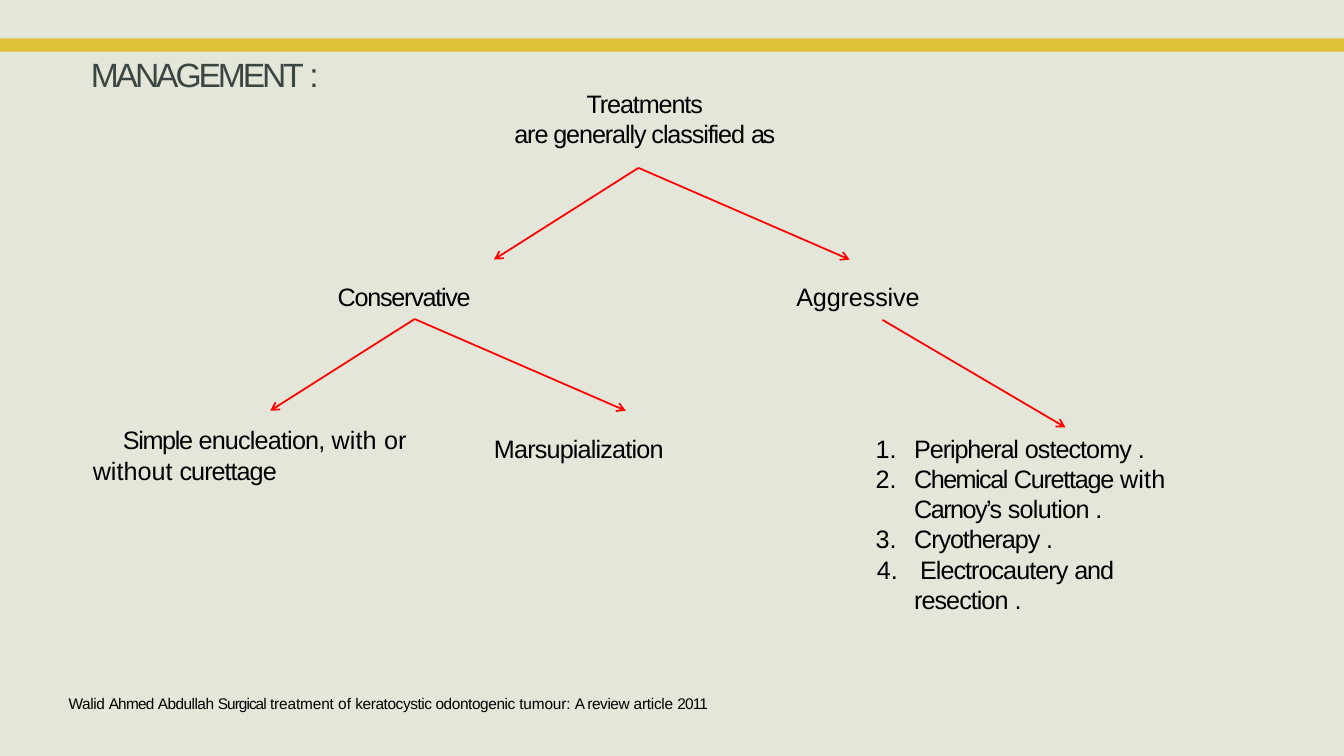
import pptx
import pptx.util
import pptx.dml.color
import pptx.enum.shapes
import pptx.enum.text
import pptx.oxml.ns
import lxml.etree

Cm = pptx.util.Cm
INK = "000000"
RED = "FF0000"
LINE_HEIGHT = 0.84


def color(value):
    return pptx.dml.color.RGBColor.from_string(value)


def sub(parent, tag, **attributes):
    return lxml.etree.SubElement(parent, pptx.oxml.ns.qn(tag), **attributes)


def add_text(slide, box, paragraphs, size=18, ink=INK, align="LEFT", indents=(), numbered=0):
    sp = slide.shapes.add_textbox(*map(Cm, box))
    tf = sp.text_frame
    tf.word_wrap = True
    tf.margin_left = Cm(0.03)
    tf.margin_top = Cm(0.06)
    tf.margin_right = tf.margin_bottom = 0
    for i, runs in enumerate(paragraphs):
        p = tf.paragraphs[0] if i == 0 else tf.add_paragraph()
        p.alignment = getattr(pptx.enum.text.PP_ALIGN, align)
        pPr = p._p.get_or_add_pPr()
        if indents:
            left, first = indents[i]
            pPr.set("marL", str(Cm(left)))
            pPr.set("indent", str(Cm(first)))
        if i < numbered:
            sub(pPr, "a:buFont", typeface="Arial")
            sub(pPr, "a:buAutoNum", type="arabicPeriod")
        p.font.size = pptx.util.Pt(size)
        for text, spacing in runs:
            r = p.add_run()
            r.text = text
            r.font.name = "Arial"
            r.font.size = pptx.util.Pt(size)
            r.font.color.rgb = color(ink)
            r._r.get_or_add_rPr().set("spc", str(round(spacing * 100)))
    return sp


def add_arrow(slide, x, y, dx, dy):
    line = slide.shapes.add_connector(
        pptx.enum.shapes.MSO_CONNECTOR.STRAIGHT, Cm(x), Cm(y), Cm(x + dx), Cm(y + dy))
    line.line.color.rgb = color(RED)
    line.line.width = pptx.util.Pt(1.25)
    sub(line.line._get_or_add_ln(), "a:tailEnd", type="arrow", w="med", len="med")
    sub(line._element.spPr, "a:effectLst")


def add_branch(slide, box, paragraphs, start, arrows, **format):
    add_text(slide, box, paragraphs, **format)
    for dx, dy in arrows:
        add_arrow(slide, box[0] + start[0], box[1] + start[1], dx, dy)


def add_header(slide, left, top, width, height):
    sp = slide.shapes.add_shape(
        pptx.enum.shapes.MSO_SHAPE.RECTANGLE, Cm(left), Cm(top), Cm(width), Cm(height))
    sp.shadow.inherit = False
    sp.fill.solid()
    sp.fill.fore_color.rgb = color("DDC237")
    sp.line.fill.background()
    add_text(slide, (left + 2.26, top + height, 7.7, 1.09),
             [[("MANAGEMENT ", -2.2), (":", -0.2)]], size=24, ink="3B4643")


def add_classification(slide, left, top):
    fork = [(-3.64, 2.31), (5.32, 2.31)]
    add_branch(slide, (left + 9.53, top, 8.79, 1.6),
               [[("Treatments", -0.8)], [("are generally classified ", -0.8), ("as", -1.7)]],
               (4.25, 2.07), fork, align="CENTER")
    add_branch(slide, (left + 6.17, top + 4.88, 4.55, LINE_HEIGHT),
               [[("Conservative", -0.9)]], (1.97, 1), fork)
    add_branch(slide, (left + 17.73, top + 4.88, 3.76, LINE_HEIGHT),
               [[("Aggressive", -0.1)]], (2.2, 1.02), [(4.61, 2.71)])


def add_options(slide, left, top):
    add_text(slide, (left, top, 8.92, 1.6),
             [[("Simple ", -1), ("enucleation, ", -0.6), ("with ", 0.1), ("or ", -0.1),
               ("without ", 0), ("curettage", -0.7)]], indents=[(0, 0.76)])
    add_text(slide, (left + 10.11, top + 0.21, 5.79, LINE_HEIGHT),
             [[("Marsupialization", -0.6)]])
    item = (0.99, -0.97)
    add_text(slide, (left + 19.71, top + 0.21, 8.13, 4.65), [
        [("Peripheral ", -0.8), ("ostectomy ", -0.7), (".", -0.5)],
        [("Chemical ", -1.1), ("Curettage ", -0.9), ("with ", 0.1),
         ("Carnoy’s ", -1.1), ("solution .", -0.5)],
        [("Cryotherapy ", -0.8), (".", -0.5)],
        [("Electrocautery ", -0.7), ("and", -0.8)],
        [("resection ", -0.7), (".", -0.5)],
    ], indents=[item, item, item, (1.14, -1.09), (0.99, 0)], numbered=4)


def add_citation(slide, box):
    add_text(slide, box, [[
        ("Walid ", -0.3), ("Ahmed ", -0.6), ("Abdullah ", -0.4), ("Surgical ", -0.7),
        ("treatment ", -0.1), ("of ", 0), ("keratocystic odontogenic ", -0.3),
        ("tumour: ", -0.1), ("A ", -0.9), ("review ", -0.3), ("article ", -0.2),
        ("2011", -0.6)]], size=11)


def main():
    prs = pptx.Presentation()
    prs.slide_width = Cm(33.87)
    prs.slide_height = Cm(19.05)
    slide = prs.slides.add_slide(prs.slide_layouts[6])
    slide.background.fill.solid()
    slide.background.fill.fore_color.rgb = color("E4E6DA")
    add_header(slide, 0, 0.97, 33.87, 0.33)
    add_classification(slide, 2.31, 2.16)
    add_options(slide, 2.31, 10.64)
    add_citation(slide, (1.7, 17.42, 21.26, 0.51))
    prs.save("out.pptx")


if __name__ == "__main__":
    main()
